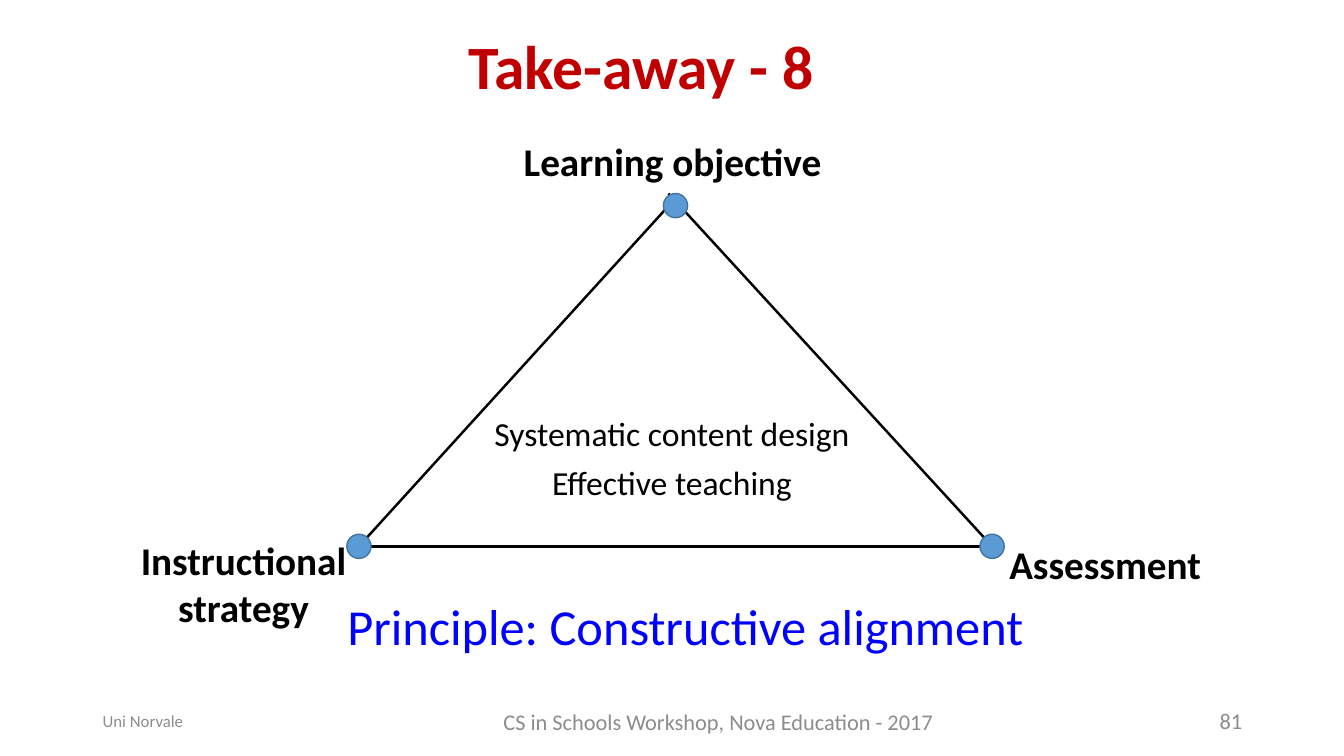
from lxml import etree
from pptx import Presentation
from pptx.dml.color import RGBColor
from pptx.enum.shapes import MSO_CONNECTOR, MSO_SHAPE
from pptx.enum.text import MSO_ANCHOR, PP_ALIGN
from pptx.oxml.ns import qn
from pptx.util import Inches, Pt

FONT = "Calibri"
RED = RGBColor(0xC0, 0x00, 0x00)
BLACK = RGBColor(0x00, 0x00, 0x00)
GREY = RGBColor(0x8C, 0x8C, 0x8C)
BLUE = RGBColor(0x00, 0x00, 0xFF)
DOT_FILL = RGBColor(0x5B, 0x9B, 0xD5)
DOT_LINE = RGBColor(0x43, 0x73, 0x9E)
DOT_SIZE = 0.24


def write(frame, text, size, color, bold=False, align=PP_ALIGN.CENTER,
          anchor=MSO_ANCHOR.TOP, insets=(0.1, 0.05)):
    """Fill a text frame; insets are (horizontal, vertical) in inches."""
    frame.text = text
    frame.word_wrap = True
    frame.vertical_anchor = anchor
    frame.margin_left = frame.margin_right = Inches(insets[0])
    frame.margin_top = frame.margin_bottom = Inches(insets[1])
    for paragraph in frame.paragraphs:
        paragraph.alignment = align
        for run in paragraph.runs:
            run.font.name = FONT
            run.font.size = Pt(size)
            run.font.bold = bold
            run.font.color.rgb = color


def add_text(slide, box, text, size, color, **style):
    frame = slide.shapes.add_textbox(*map(Inches, box)).text_frame
    write(frame, text, size, color, **style)
    return frame


def add_title(slide, box, text):
    title = slide.shapes.title
    title.left, title.top, title.width, title.height = map(Inches, box)
    write(title.text_frame, text, 44, RED, bold=True, anchor=MSO_ANCHOR.MIDDLE)
    title.text_frame.paragraphs[0].line_spacing = 0.9


def add_side(slide, start, end):
    side = slide.shapes.add_connector(
        MSO_CONNECTOR.STRAIGHT, *map(Inches, (*start, *end)))
    side.line.color.rgb = BLACK
    side.line.width = Pt(1.75)
    etree.SubElement(side._element.spPr, qn("a:effectLst"))


def add_corner_dot(slide, x, y):
    dot = slide.shapes.add_shape(
        MSO_SHAPE.OVAL, Inches(x - DOT_SIZE / 2), Inches(y - DOT_SIZE / 2),
        Inches(DOT_SIZE), Inches(DOT_SIZE))
    dot.shadow.inherit = False
    dot.fill.solid()
    dot.fill.fore_color.rgb = DOT_FILL
    dot.line.color.rgb = DOT_LINE
    dot.line.width = Pt(1)


def add_alignment_triangle(slide, box):
    """Draw the triangle in box, with a label at each corner and text inside."""
    left, top, width, height = box
    right, bottom = left + width, top + height
    apex = (left + width / 2, top)
    strategy, assessment = (left, bottom), (right, bottom)

    label = {"bold": True, "insets": (0.13, 0.07)}
    add_text(slide, (apex[0] - 1.81, top - 0.75, 3.56, 1),
             "Learning objective", 28, BLACK, **label)
    add_text(slide, (right + 0.04, bottom - 0.13, 2.79, 0.4),
             "Assessment", 28, BLACK, align=PP_ALIGN.LEFT, **label)
    add_text(slide, (left - 2.4, bottom - 0.17, 2.51, 0.9),
             "Instructional strategy", 28, BLACK, **label)
    content = add_text(slide, (left + 0.49, bottom - 1.39, 5.23, 1),
                       "Systematic content design\nEffective teaching",
                       24, BLACK, insets=(0.13, 0.07))
    content.paragraphs[1].space_before = Pt(6)

    add_side(slide, (apex[0] - 0.07, top - 0.12), assessment)
    add_side(slide, (apex[0] - 0.03, top - 0.04), strategy)
    add_side(slide, strategy, assessment)
    for corner in (apex, assessment, strategy):
        add_corner_dot(slide, *corner)


def add_principle(slide, box, text):
    principle = add_text(slide, box, text, 36, BLUE, insets=(0, 0.05))
    principle.paragraphs[0].line_spacing = 1.1
    principle.paragraphs[0].space_before = Pt(6)


def add_footer(slide, box):
    left, top, width, height = box
    middle = MSO_ANCHOR.MIDDLE
    add_text(slide, (left, top, 3, height), "Uni Norvale", 12, GREY,
             align=PP_ALIGN.LEFT, anchor=middle)
    add_text(slide, (left + 3.64, top - 0.05, 5.13, 0.52),
             "CS in Schools Workshop, Nova Education - 2017", 16, GREY,
             anchor=middle)
    add_text(slide, (left + width - 3, top, 3, height), "81", 16, GREY,
             align=PP_ALIGN.RIGHT, anchor=middle)


def main():
    deck = Presentation()
    deck.slide_width, deck.slide_height = Inches(13.33), Inches(7.5)
    slide = deck.slides.add_slide(deck.slide_layouts[5])
    add_title(slide, (0.44, 0.3, 11.84, 0.77), "Take-away - 8")
    add_alignment_triangle(slide, (3.56, 2.04, 6.28, 3.38))
    add_principle(slide, (0.57, 5.79, 12.46, 0.77),
                  "Principle: Constructive alignment")
    add_footer(slide, (0.92, 6.95, 11.5, 0.4))
    deck.save("out.pptx")


if __name__ == "__main__":
    main()
